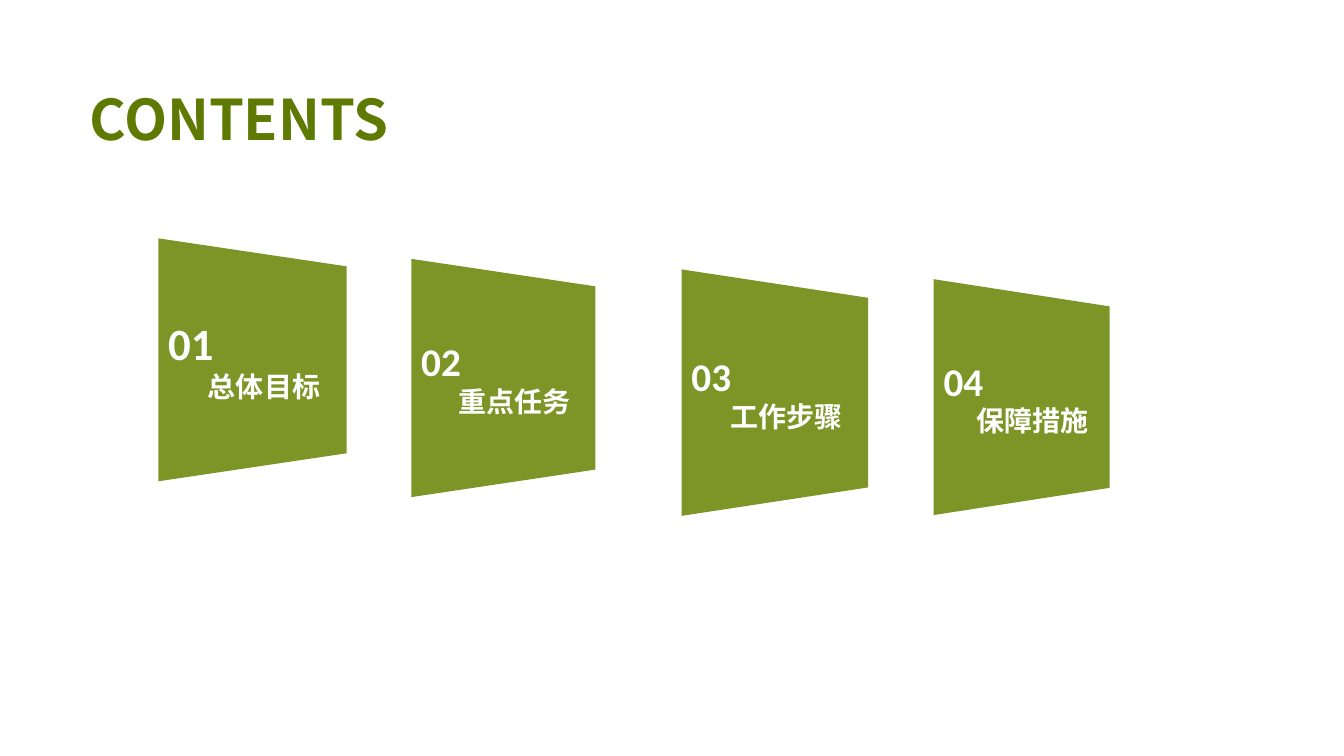
from dataclasses import dataclass

from pptx import Presentation
from pptx.dml.color import RGBColor
from pptx.enum.text import MSO_ANCHOR, PP_ALIGN
from pptx.util import Inches, Pt

LEFT, CENTER = PP_ALIGN.LEFT, PP_ALIGN.CENTER
MIDDLE = MSO_ANCHOR.MIDDLE

TITLE = "CONTENTS"
CARDS = [
    ("01", "总体目标", 32, (1.57, 2.54, 2.10, 2.06)),
    ("02", "重点任务", 28, (4.08, 2.74, 2.05, 2.02)),
    ("03", "工作步骤", 28, (6.76, 2.85, 2.08, 2.09)),
    ("04", "保障措施", 28, (9.26, 2.94, 1.96, 2.00)),
]
WIDTH_RATIO, NEAR_RATIO, FAR_RATIO = 0.89, 1.17, 0.9
INSET = 0.1


@dataclass(frozen=True)
class Theme:
    title_color: RGBColor = RGBColor(0x5E, 0x7A, 0x02)
    card_color: RGBColor = RGBColor(0x7C, 0x95, 0x26)
    card_text: RGBColor = RGBColor(0xFF, 0xFF, 0xFF)
    title_font: str = "Noto Sans CJK SC"
    card_font: str = "Calibri"
    title_size: int = 40
    label_size: int = 20


THEME = Theme()


def write(para, text, font, size, color, align):
    para.text = text
    para.alignment = align
    para.font.name = font
    para.font.size = Pt(size)
    para.font.bold = True
    para.font.color.rgb = color


def add_title(page):
    box = page.shapes.add_textbox(Inches(0.66), Inches(0.8), Inches(3.42), Inches(0.75))
    frame = box.text_frame
    frame.word_wrap = True
    frame.margin_left = frame.margin_right = Inches(0.07)
    frame.margin_top = frame.margin_bottom = Inches(0.04)
    write(frame.paragraphs[0], TITLE, THEME.title_font, THEME.title_size,
          THEME.title_color, CENTER)


def add_card(page, number, label, number_size, area):
    left, top, width, height = area
    middle = top + height / 2
    right = left + width * WIDTH_RATIO
    near, far = height * NEAR_RATIO / 2, height * FAR_RATIO / 2
    corners = [(left, middle - near), (right, middle - far),
               (right, middle + far), (left, middle + near)]
    points = [(Inches(x), Inches(y)) for x, y in corners]

    outline = page.shapes.build_freeform(*points[0])
    outline.add_line_segments(points[1:], close=True)
    card = outline.convert_to_shape()
    card.shadow.inherit = False
    card.fill.solid()
    card.fill.fore_color.rgb = THEME.card_color
    card.line.fill.background()

    frame = card.text_frame
    frame.word_wrap = True
    frame.vertical_anchor = MIDDLE
    frame.margin_left = Inches(INSET)
    frame.margin_right = Inches(INSET - width * (1 - WIDTH_RATIO))
    write(frame.paragraphs[0], number, THEME.card_font, number_size,
          THEME.card_text, LEFT)
    write(frame.add_paragraph(), label, THEME.card_font, THEME.label_size,
          THEME.card_text, CENTER)


def main():
    deck = Presentation()
    deck.slide_width, deck.slide_height = Inches(13.33), Inches(7.5)
    page = deck.slides.add_slide(deck.slide_layouts[6])
    add_title(page)
    for card in CARDS:
        add_card(page, *card)
    deck.save("out.pptx")


if __name__ == "__main__":
    main()
